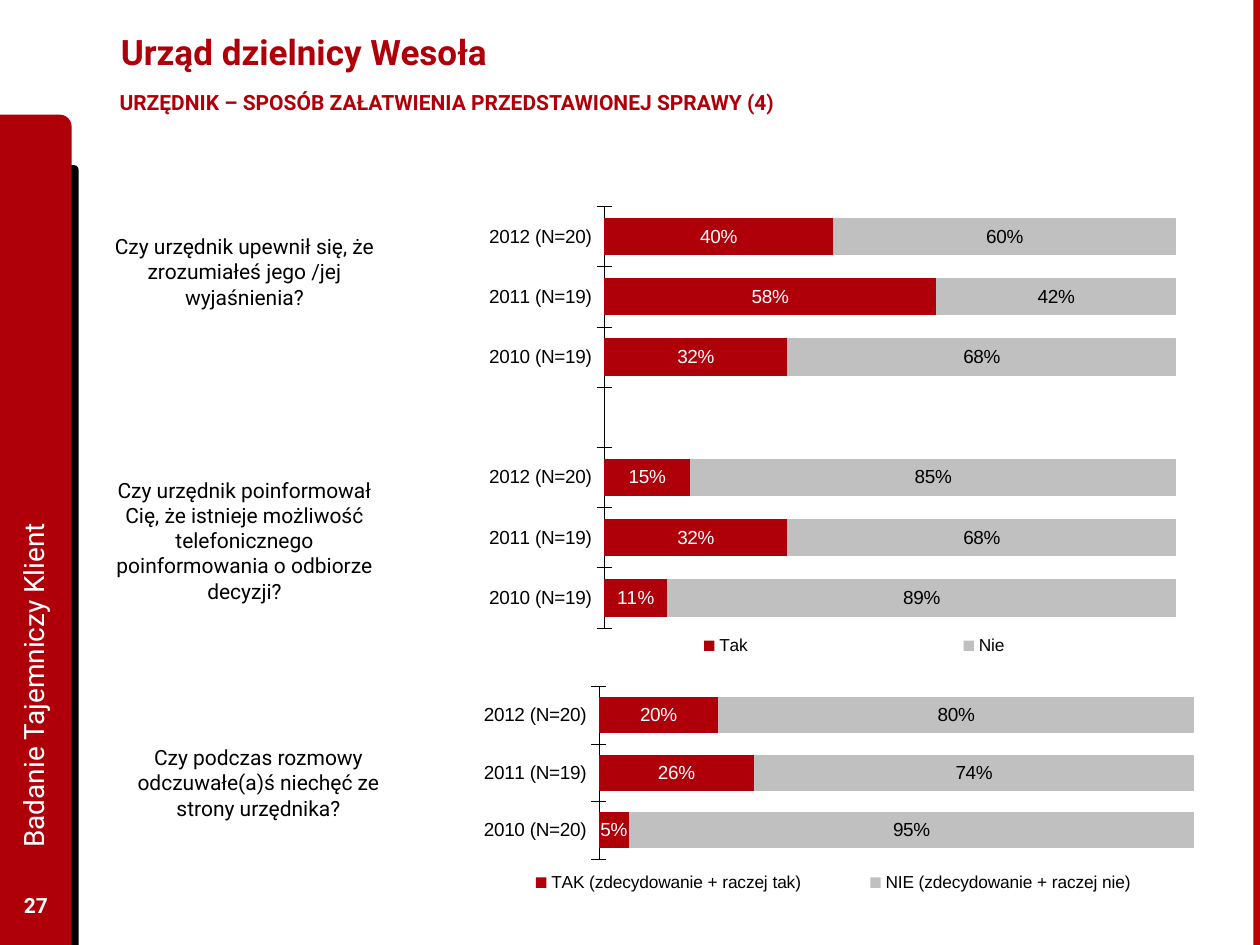
import pptx
import pptx.chart.data
import pptx.dml.color
import pptx.enum.chart
import pptx.enum.shapes
import pptx.enum.text
import pptx.util
from lxml import etree
from pptx.oxml.ns import qn

Pt = pptx.util.Pt
XL = pptx.enum.chart
SHAPE = pptx.enum.shapes.MSO_SHAPE
ANCHOR = pptx.enum.text.MSO_ANCHOR
ALIGN = pptx.enum.text.PP_ALIGN

RED, GREY, BLACK, WHITE = "AF000A", "C0C0C0", "000000", "FFFFFF"


def rgb(code):
    return pptx.dml.color.RGBColor.from_string(code)


def manual_layout(x, y, w, h, inner=False):
    """Layout element with a fixed frame, in fractions of the chart."""
    layout = etree.Element(qn("c:layout"))
    ml = etree.SubElement(layout, qn("c:manualLayout"))
    parts = [("layoutTarget", "inner")] if inner else []
    parts += [("xMode", "edge"), ("yMode", "edge"),
              ("x", x), ("y", y), ("w", w), ("h", h)]
    for tag, val in parts:
        etree.SubElement(ml, qn("c:" + tag)).set("val", str(val))
    return layout


class Deck:
    text_font, chart_font = "Roboto", "Arial"
    label_size, legend_size = 10.8, 9.9

    def __init__(self, s):
        self.s = s

    def shape(self, kind, box, fill):
        sp = self.s.shapes.add_shape(kind, *map(Pt, box))
        sp.shadow.inherit = False
        sp.fill.solid()
        sp.fill.fore_color.rgb = rgb(fill)
        sp.line.fill.background()

    def text(self, text, box, size=12, color=BLACK, bold=False,
             align=ALIGN.LEFT, anchor=ANCHOR.TOP, rotation=0):
        sp = self.s.shapes.add_textbox(*map(Pt, box))
        sp.rotation = rotation
        tf = sp.text_frame
        tf.word_wrap = True
        tf.vertical_anchor = anchor
        p = tf.paragraphs[0]
        p.text = text
        p.alignment = align
        self.font(p.font, size, color, self.text_font)
        p.font.bold = bold

    def font(self, font, size, color, name):
        font.size = Pt(size)
        font.name = name
        font.color.rgb = rgb(color)

    def bars(self, box, cats, series, plot_frame, legend_frame, legend_pos):
        data = pptx.chart.data.CategoryChartData(number_format="0%")
        data.categories = cats
        for name, vals in series:
            data.add_series(name, vals)
        chart = self.s.shapes.add_chart(
            XL.XL_CHART_TYPE.BAR_STACKED, *map(Pt, box), data).chart
        chart.has_title = False
        self.font(chart.font, self.label_size, BLACK, self.chart_font)

        # Bars and their labels
        plot = chart.plots[0]
        plot.gap_width, plot.overlap = 60, 100
        plot.vary_by_categories = False
        for ser, fill, color in zip(plot.series, (RED, GREY), (WHITE, BLACK)):
            ser.format.fill.solid()
            ser.format.fill.fore_color.rgb = rgb(fill)
            labels = ser.data_labels
            labels.show_value = True
            labels.number_format = "0%"
            labels.number_format_is_linked = False
            labels.position = XL.XL_LABEL_POSITION.CENTER
            self.font(labels.font, self.label_size, color, self.chart_font)

        # Axes
        cat, val = chart.category_axis, chart.value_axis
        cat.reverse_order = True
        cat.major_tick_mark = XL.XL_TICK_MARK.CROSS
        cat.format.line.color.rgb = rgb(BLACK)
        cat.format.line.width = Pt(0.23)
        val.minimum_scale, val.maximum_scale, val.major_unit = 0, 1, 0.2
        val.has_major_gridlines = False
        val.visible = False

        # Legend
        chart.has_legend = True
        legend = chart.legend
        legend.position = legend_pos
        legend.include_in_layout = False
        self.font(legend.font, self.legend_size, BLACK, self.chart_font)

        # Fixed frames of plot and legend
        area = chart._chartSpace.find(".//" + qn("c:plotArea"))
        for parent in (area, legend._element):
            for old in parent.findall(qn("c:layout")):
                parent.remove(old)
        area.insert(0, manual_layout(*plot_frame, inner=True))
        legend._element.find(qn("c:legendPos")).addnext(
            manual_layout(*legend_frame))


def main():
    prs = pptx.Presentation()
    prs.slide_width, prs.slide_height = Pt(720), Pt(540)
    deck = Deck(prs.slides.add_slide(prs.slide_layouts[6]))

    # Side band and right edge
    deck.shape(SHAPE.ROUND_1_RECTANGLE, (28, 94.3, 17, 445.7), BLACK)
    deck.shape(SHAPE.ROUND_1_RECTANGLE, (0, 65.5, 41, 474.5), RED)
    deck.shape(SHAPE.RECTANGLE, (716.2, 0, 3.8, 540), "BD0000")

    # Headings
    deck.text("Urząd dzielnicy Wesoła", (62, 3.6, 559.5, 52), 20, RED,
              bold=True, anchor=ANCHOR.MIDDLE)
    deck.text("URZĘDNIK – SPOSÓB ZAŁATWIENIA PRZEDSTAWIONEJ SPRAWY (4)",
              (61.2, 47.5, 430, 24), 12, RED, bold=True)

    # Questions
    for text, x, y, h in (
        ("Czy urzędnik poinformował Cię, że istnieje możliwość "
         "telefonicznego poinformowania o odbiorze decyzji?", 54, 269.3, 80),
        ("Czy urzędnik upewnił się, że zrozumiałeś jego /jej wyjaśnienia?",
         54, 130, 51),
        ("Czy podczas rozmowy odczuwałe(a)ś niechęć ze strony urzędnika?",
         62, 422, 51),
    ):
        deck.text(text, (x, y, 171.4, h), align=ALIGN.CENTER)

    # Charts
    deck.bars((54.7, 391.7, 627.8, 125.3),
              ["2012 (N=20)", "2011 (N=19)", "2010 (N=20)"],
              [("TAK (zdecydowanie + raczej tak)", (0.2, 0.26, 0.05)),
               ("NIE (zdecydowanie + raczej nie)", (0.8, 0.74, 0.95))],
              (0.459, 0.005, 0.542, 0.787), (0.343, 0.84, 0.66, 0.12),
              XL.XL_LEGEND_POSITION.BOTTOM)
    years = ["2012 (N=20)", "2011 (N=19)", "2010 (N=19)"]
    deck.bars((100.8, 114.5, 593.3, 267.1),
              years + [""] + years,
              [("Tak", (0.4, 0.58, 0.32, None, 0.15, 0.32, 0.11)),
               ("Nie", (0.6, 0.42, 0.68, None, 0.85, 0.68, 0.89))],
              (0.412, 0.013, 0.551, 0.902), (0.306, 0.923, 0.7, 0.06),
              XL.XL_LEGEND_POSITION.RIGHT)

    # Side band texts
    deck.text("27", (0, 502.6, 41, 28.8), 12, WHITE, bold=True,
              align=ALIGN.CENTER, anchor=ANCHOR.MIDDLE)
    deck.text("Badanie Tajemniczy Klient", (-188.6, 265.7, 414.7, 36.7), 16,
              WHITE, anchor=ANCHOR.MIDDLE, rotation=270)

    prs.save("out.pptx")


if __name__ == "__main__":
    main()
